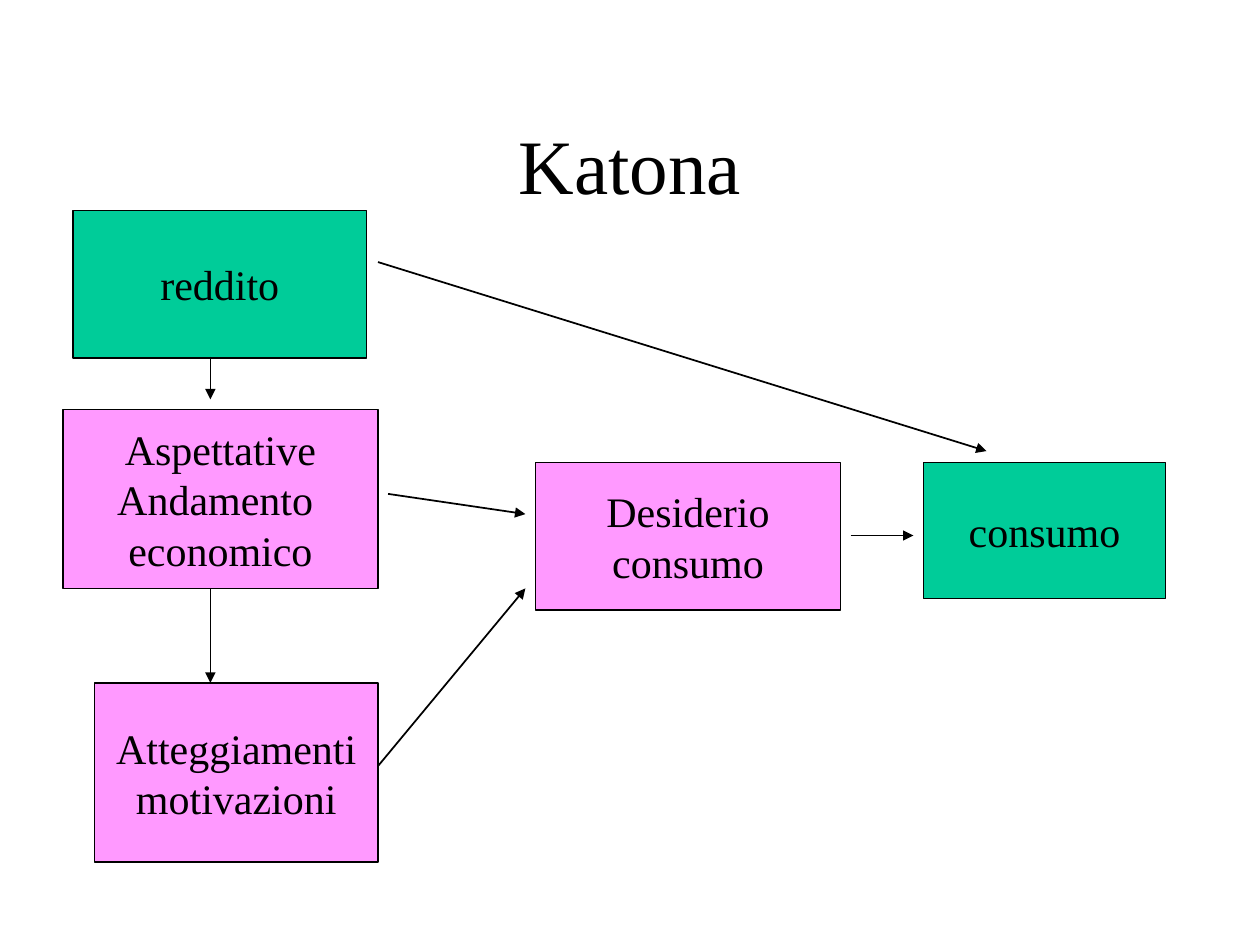
from dataclasses import dataclass

import lxml.etree
import pptx
import pptx.dml.color
import pptx.enum.shapes
import pptx.enum.text
import pptx.oxml.ns
import pptx.util

Inches = pptx.util.Inches
COLOURS = {"black": "000000", "white": "FFFFFF", "green": "00CC99", "pink": "FF99FF"}
FONT = "Times New Roman"


@dataclass
class Concept:
    lines: tuple[str, ...]
    left: float
    top: float
    width: float
    height: float
    colour: str


@dataclass
class Arrow:
    start: tuple[float, float]
    end: tuple[float, float]


CONCEPTS = [
    Concept(("reddito",), 0.58, 1.67, 2.33, 1.17, "green"),
    Concept(("Desiderio", "consumo"), 4.25, 3.67, 2.42, 1.17, "pink"),
    Concept(("Aspettative", "Andamento ", "economico"), 0.5, 3.25, 2.5, 1.42, "pink"),
    Concept(("Atteggiamenti", "motivazioni"), 0.75, 5.42, 2.25, 1.42, "pink"),
    Concept(("consumo",), 7.33, 3.67, 1.92, 1.08, "green"),
]

ARROWS = [
    Arrow((3, 2.08), (7.83, 3.58)),
    Arrow((1.67, 2.83), (1.67, 3.17)),
    Arrow((1.67, 4.67), (1.67, 5.42)),
    Arrow((3, 6.08), (4.17, 4.67)),
    Arrow((3.08, 3.92), (4.17, 4.08)),
    Arrow((6.75, 4.25), (7.25, 4.25)),
]


def colour(name: str) -> pptx.dml.color.RGBColor:
    return pptx.dml.color.RGBColor.from_string(COLOURS[name])


def write_lines(box, lines: tuple[str, ...], size: int, wrap: bool) -> None:
    frame = box.text_frame
    frame.word_wrap = wrap
    frame.vertical_anchor = pptx.enum.text.MSO_ANCHOR.MIDDLE
    for index, line in enumerate(lines):
        para = frame.add_paragraph() if index else frame.paragraphs[0]
        para.alignment = pptx.enum.text.PP_ALIGN.CENTER
        span = para.add_run()
        span.text = line
        span.font.name = FONT
        span.font.size = pptx.util.Pt(size)
        span.font.color.rgb = colour("black")


def style_line(line) -> None:
    line.color.rgb = colour("black")
    line.width = pptx.util.Pt(1)


def draw_title(page, title: str) -> None:
    box = page.shapes.add_textbox(Inches(0.75), Inches(0.67), Inches(8.5), Inches(1.25))
    write_lines(box, (title,), 44, True)


def draw_concept(page, concept: Concept) -> None:
    box = page.shapes.add_shape(
        pptx.enum.shapes.MSO_SHAPE.RECTANGLE,
        Inches(concept.left),
        Inches(concept.top),
        Inches(concept.width),
        Inches(concept.height),
    )
    box.shadow.inherit = False
    box.fill.solid()
    box.fill.fore_color.rgb = colour(concept.colour)
    style_line(box.line)
    write_lines(box, concept.lines, 24, False)


def draw_arrow(page, arrow: Arrow) -> None:
    connector = page.shapes.add_connector(
        pptx.enum.shapes.MSO_CONNECTOR.STRAIGHT,
        *(Inches(value) for value in arrow.start + arrow.end),
    )
    style_line(connector.line)
    qualify = pptx.oxml.ns.qn
    properties = connector._element.spPr
    outline = properties.find(qualify("a:ln"))
    lxml.etree.SubElement(outline, qualify("a:tailEnd"), type="triangle")
    lxml.etree.SubElement(properties, qualify("a:effectLst"))


def main() -> None:
    deck = pptx.Presentation()
    deck.slide_width = Inches(10)
    deck.slide_height = Inches(7.5)
    page = deck.slides.add_slide(deck.slide_layouts[6])
    page.background.fill.solid()
    page.background.fill.fore_color.rgb = colour("white")
    draw_title(page, "Katona")
    for concept in CONCEPTS:
        draw_concept(page, concept)
    for arrow in ARROWS:
        draw_arrow(page, arrow)
    deck.save("out.pptx")


if __name__ == "__main__":
    main()
